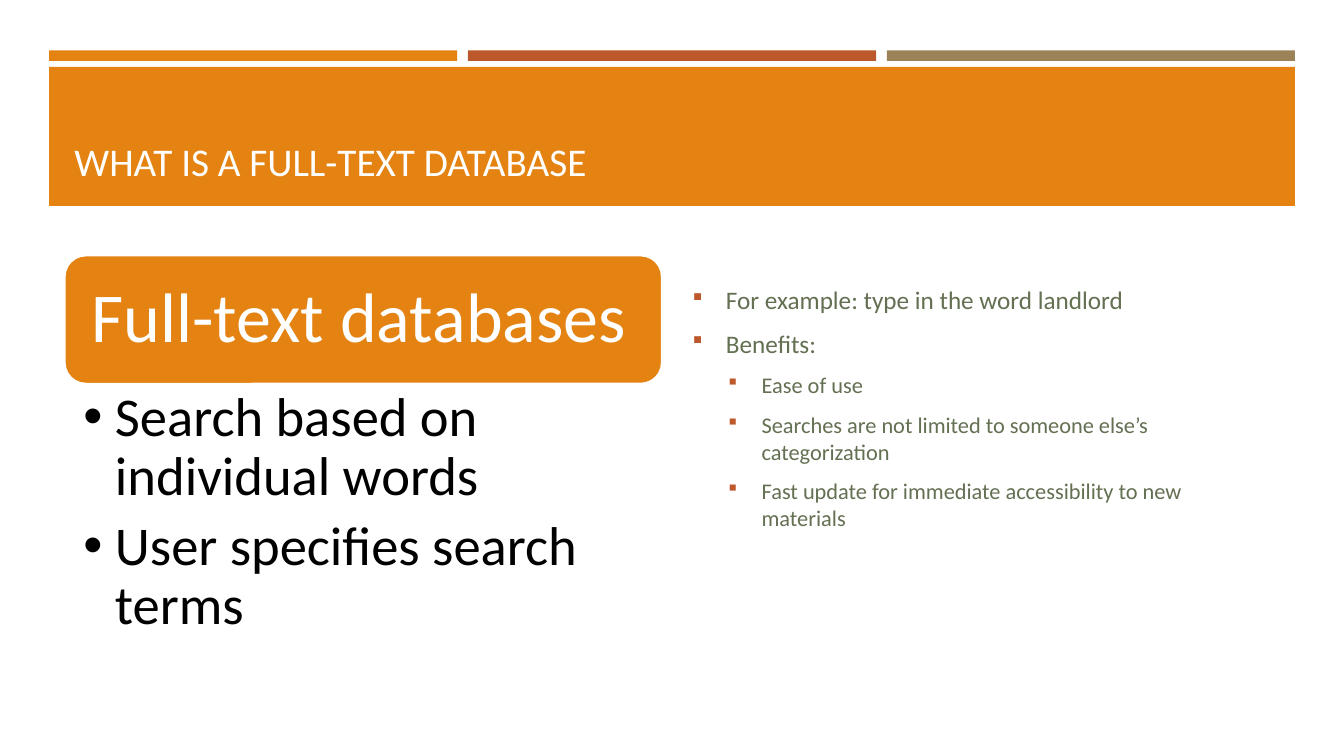
"""Build the slide on full-text databases."""
from lxml.etree import SubElement
from pptx import Presentation
from pptx.dml.color import RGBColor
from pptx.enum.shapes import MSO_SHAPE
from pptx.enum.text import MSO_ANCHOR, PP_ALIGN
from pptx.oxml.ns import qn
from pptx.util import Pt

ORANGE = RGBColor(0xE4, 0x83, 0x12)
RUST = RGBColor(0xBD, 0x58, 0x2C)
TAN = RGBColor(0x9B, 0x83, 0x57)
GREEN = RGBColor(0x63, 0x70, 0x52)
WHITE = RGBColor(0xFF, 0xFF, 0xFF)
BLACK = RGBColor(0, 0, 0)


def add_text(tf, text, size, color, spacing=1.0, before=0, after=0,
             indent=0, hang=0, bullet=None, bullet_font="Arial", bullet_color=None):
    p = tf.paragraphs[0] if not tf.text else tf.add_paragraph()
    p.alignment = PP_ALIGN.LEFT
    p.line_spacing = spacing
    p.space_before, p.space_after = Pt(before), Pt(after)
    r = p.add_run()
    r.text = text
    r.font.name, r.font.size = "Calibri", Pt(size)
    r.font.color.rgb = color
    if bullet:
        pPr = p._p.get_or_add_pPr()
        pPr.set("marL", str(Pt(indent)))
        pPr.set("indent", str(-Pt(hang)))
        if bullet_color:
            clr = SubElement(pPr, qn("a:buClr"))
            SubElement(clr, qn("a:srgbClr"), val=str(bullet_color))
            SubElement(pPr, qn("a:buSzPct"), val="92000")
        SubElement(pPr, qn("a:buFont"), typeface=bullet_font)
        SubElement(pPr, qn("a:buChar"), char=bullet)


def add_block(kind, left, top, width, height, fill):
    sp = s.shapes.add_shape(kind, Pt(left), Pt(top), Pt(width), Pt(height))
    sp.shadow.inherit = False
    sp.fill.solid()
    sp.fill.fore_color.rgb = fill
    sp.line.fill.background()
    return sp


prs = Presentation()
prs.slide_width, prs.slide_height = Pt(960), Pt(540)
s = prs.slides.add_slide(prs.slide_layouts[5])

for i, color in enumerate([ORANGE, RUST, TAN]):
    add_block(MSO_SHAPE.RECTANGLE, 35 + i * 299.2, 36, 291.6, 7.5, color)
add_block(MSO_SHAPE.RECTANGLE, 35, 47.7, 890, 99.3, ORANGE)

title = s.shapes.title
title.left, title.top, title.width, title.height = Pt(46), Pt(57.6), Pt(868), Pt(77.8)
s.shapes._spTree.append(title._element)
tf = title.text_frame
tf.vertical_anchor = MSO_ANCHOR.BOTTOM
add_text(tf, "WHAT IS A FULL-TEXT DATABASE", 28, WHITE, spacing=0.9)

heading = add_block(MSO_SHAPE.ROUNDED_RECTANGLE, 46, 182.3, 427, 92, ORANGE)
heading.line.color.rgb = WHITE
heading.line.width = Pt(1.75)
tf = heading.text_frame
tf.word_wrap = True
tf.vertical_anchor = MSO_ANCHOR.MIDDLE
tf.margin_left = tf.margin_right = Pt(15)
add_text(tf, "Full-text databases", 50, WHITE, spacing=0.9)

points = s.shapes.add_textbox(Pt(46), Pt(273), Pt(427), Pt(183.6))
tf = points.text_frame
tf.word_wrap = True
tf.margin_left, tf.margin_right = Pt(13.6), Pt(28)
tf.margin_top = tf.margin_bottom = Pt(5)
for text in ["Search based on individual words", "User specifies search terms"]:
    add_text(tf, text, 39, BLACK, spacing=0.9, after=7.8,
             indent=22.5, hang=22.5, bullet="•")

benefits = s.shapes.add_textbox(Pt(487.5), Pt(175.7), Pt(427), Pt(285.8))
tf = benefits.text_frame
tf.word_wrap = True
tf.vertical_anchor = MSO_ANCHOR.MIDDLE
tf.margin_bottom = Pt(58)
for level, text in [
    (0, "For example: type in the word landlord"),
    (0, "Benefits:"),
    (1, "Ease of use"),
    (1, "Searches are not limited to someone else’s categorization"),
    (1, "Fast update for immediate accessibility to new materials"),
]:
    size = 18 - 2 * level
    add_text(tf, text, size, GREEN, before=size * 0.2, after=6,
             indent=24 + 25.5 * level, hang=24, bullet="§",
             bullet_font="Wingdings", bullet_color=RUST)

prs.save("out.pptx")
